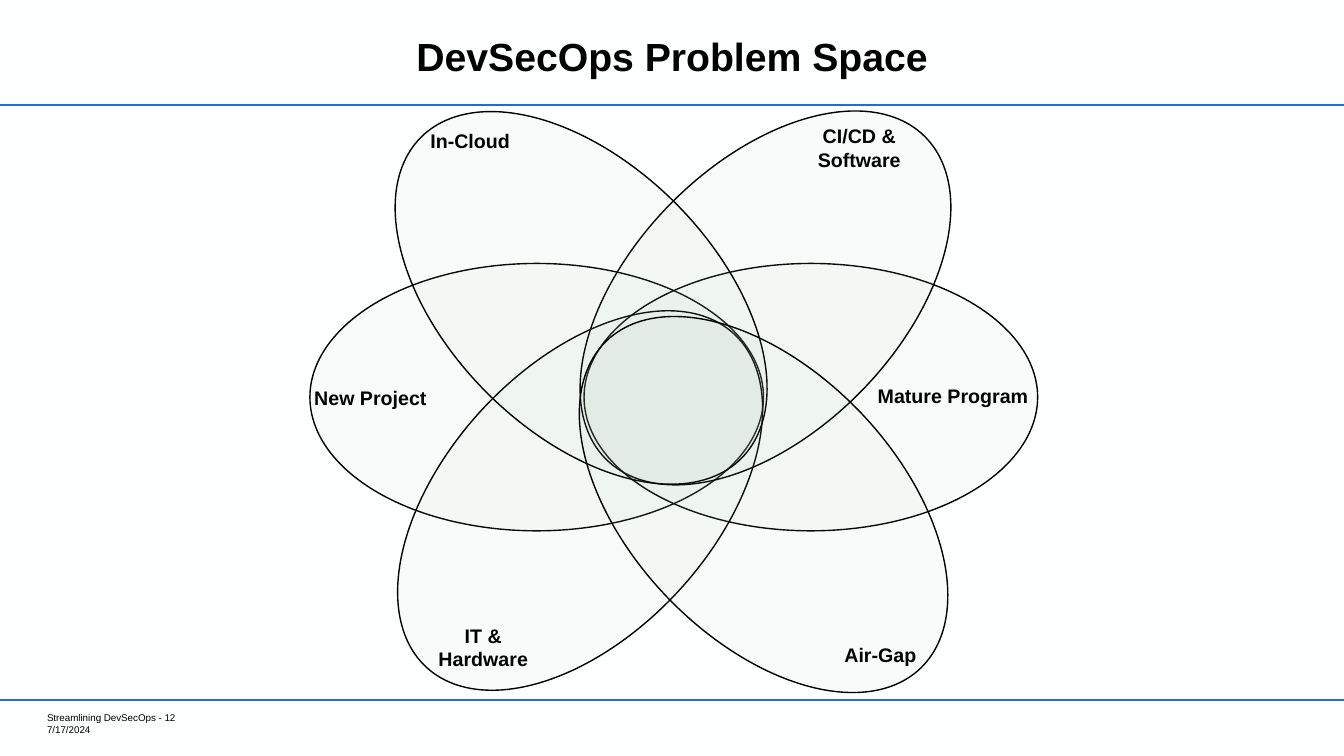
from collections import namedtuple

from lxml import etree
from pptx import Presentation
from pptx.dml.color import RGBColor
from pptx.enum.shapes import MSO_CONNECTOR as Connector, MSO_SHAPE as Shape
from pptx.enum.text import MSO_ANCHOR as Anchor, PP_ALIGN as Align
from pptx.oxml.ns import qn
from pptx.util import Pt

COLORS = {"background": "FEFFFF", "rule": "246DCD", "petal": "ADCAAD", "ink": "000000"}
FONT = "Arial"
SLIDE_W, SLIDE_H = 960, 540
TITLE_RULE_Y, FOOTER_RULE_Y = 75, 500
PETAL_W, PETAL_H, PETAL_OPACITY = 324, 191, 6
LABEL_W, LINE_H, LABEL_PAD = 103, 16.5, 8

Box = namedtuple("Box", "left top width height")
# Petal and label centres are measured from the centre of the diagram.
Petal = namedtuple("Petal", "label center angle label_center label_width lines")

PETALS = [
    Petal("New Project", (-96.6, -3.8), 0, (-215.4, -3.1), LABEL_W, 1),
    Petal("Mature Program", (99.2, -3.8), 0, (200.8, -4.5), 130, 1),
    Petal("IT & Hardware", (-65.6, 70), 312.7, (-134.8, 175.1), LABEL_W, 2),
    Petal("CI/CD & Software", (66.8, -74.7), 314.5, (133.8, -182), LABEL_W, 2),
    Petal("In-Cloud", (-64.9, -74.7), 45.1, (-144.1, -186.7), LABEL_W, 1),
    Petal("Air-Gap", (65.4, 72.9), 46.2, (148.9, 180.5), LABEL_W, 1),
]


def color(name):
    return RGBColor.from_string(COLORS[name])


def points(box):
    return [Pt(length) for length in box]


def centered_box(area, offset, width, height):
    """Box whose centre lies at the offset from the centre of the area."""
    center_x = area.left + area.width / 2 + offset[0]
    center_y = area.top + area.height / 2 + offset[1]
    return Box(center_x - width / 2, center_y - height / 2, width, height)


def add_text(slide, box, lines, size, bold=False, align=Align.LEFT,
             anchor=Anchor.TOP, insets=(0, 0)):
    frame = slide.shapes.add_textbox(*points(box)).text_frame
    frame.word_wrap = True
    frame.vertical_anchor = anchor
    frame.margin_left = frame.margin_right = Pt(insets[0])
    frame.margin_top = frame.margin_bottom = Pt(insets[1])
    frame.text = "\n".join(lines)
    for paragraph in frame.paragraphs:
        paragraph.alignment = align
        for run in paragraph.runs:
            run.font.name = FONT
            run.font.size = Pt(size)
            run.font.bold = bold
            run.font.color.rgb = color("ink")


def add_rule(slide, left, y, width, weight):
    rule = slide.shapes.add_connector(
        Connector.STRAIGHT, Pt(left), Pt(y), Pt(left + width), Pt(y))
    rule.line.color.rgb = color("rule")
    rule.line.width = Pt(weight)
    etree.SubElement(rule._element.spPr, qn("a:effectLst"))


def add_petal(slide, box, angle):
    petal = slide.shapes.add_shape(Shape.OVAL, *points(box))
    petal.rotation = angle
    petal.shadow.inherit = False
    petal.fill.solid()
    petal.fill.fore_color.rgb = color("petal")
    tint = petal._element.spPr.find(qn("a:solidFill"))[0]
    etree.SubElement(tint, qn("a:alpha"), val=str(PETAL_OPACITY * 1000))
    petal.line.color.rgb = color("ink")
    petal.line.width = Pt(1)


def add_header(slide, box):
    add_rule(slide, box.left, box.top + box.height, box.width, 1.5)
    title_box = Box(box.left + 99, box.top + 8, box.width - 198, box.height - 11)
    add_text(slide, title_box, ["DevSecOps Problem Space"], 28, bold=True,
             align=Align.CENTER, anchor=Anchor.MIDDLE, insets=(7.2, 3.6))


def add_flower(slide, box):
    # Overlapping petals
    for petal in PETALS:
        petal_box = centered_box(box, petal.center, PETAL_W, PETAL_H)
        add_petal(slide, petal_box, petal.angle)

    # Labels in front of all petals
    for petal in PETALS:
        height = petal.lines * LINE_H + LABEL_PAD
        label_box = centered_box(box, petal.label_center, petal.label_width, height)
        add_text(slide, label_box, [petal.label], 14, bold=True,
                 align=Align.CENTER, insets=(7.2, 3.6))


def add_footer(slide, box):
    add_rule(slide, box.left, box.top, box.width, 1.75)
    note_box = Box(box.left + 33.6, box.top + 8.3, 114.5, 17)
    add_text(slide, note_box, ["Streamlining DevSecOps - 12", "7/17/2024"], 7)


def main():
    deck = Presentation()
    deck.slide_width, deck.slide_height = Pt(SLIDE_W), Pt(SLIDE_H)
    slide = deck.slides.add_slide(deck.slide_layouts[6])
    slide.background.fill.solid()
    slide.background.fill.fore_color.rgb = color("background")

    add_header(slide, Box(0, 0, SLIDE_W, TITLE_RULE_Y))
    add_flower(slide, Box(0, TITLE_RULE_Y, SLIDE_W, FOOTER_RULE_Y - TITLE_RULE_Y))
    add_footer(slide, Box(0, FOOTER_RULE_Y, SLIDE_W, SLIDE_H - FOOTER_RULE_Y))
    deck.save("out.pptx")


if __name__ == "__main__":
    main()
